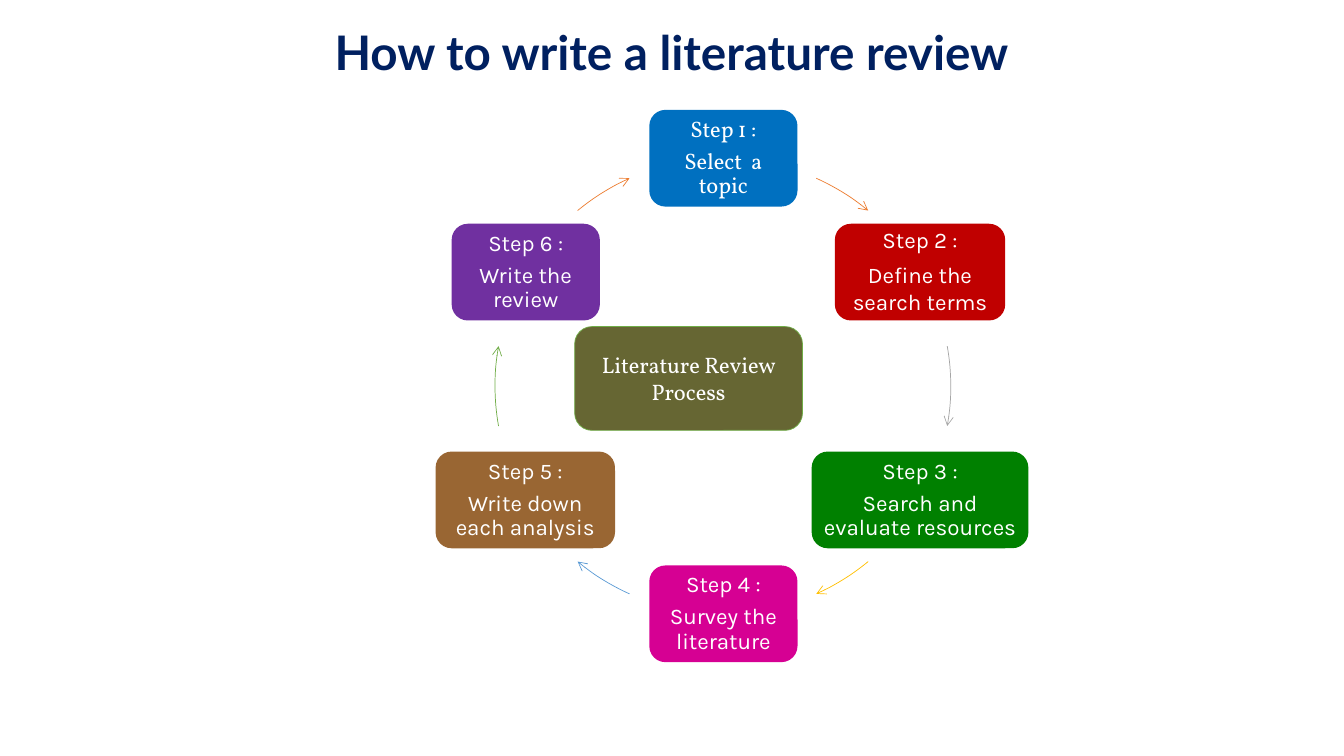
from dataclasses import dataclass
from math import cos, radians, sin

from lxml import etree
from pptx import Presentation
from pptx.dml.color import RGBColor
from pptx.enum.shapes import MSO_SHAPE
from pptx.enum.text import MSO_ANCHOR, MSO_AUTO_SIZE, PP_ALIGN
from pptx.oxml.ns import qn
from pptx.util import Emu, Pt

ROUNDED, ARC = MSO_SHAPE.ROUNDED_RECTANGLE, MSO_SHAPE.ARC
TOP, MIDDLE = MSO_ANCHOR.TOP, MSO_ANCHOR.MIDDLE
CENTER = PP_ALIGN.CENTER
NO_AUTOFIT = MSO_AUTO_SIZE.NONE

EMU_PER_PX = 9144  # 100 px to the inch
SLIDE_W, SLIDE_H = 1333, 750
RING_X, RING_Y, RING_R = 717, 383, 226
STEP_H = 96
STEP_INSET = 7

WHITE = RGBColor(0xFF, 0xFF, 0xFF)
NAVY = RGBColor(0x00, 0x20, 0x60)
BLUE = RGBColor(0x00, 0x70, 0xC0)
RED = RGBColor(0xC0, 0x00, 0x00)
GREEN = RGBColor(0x00, 0x80, 0x00)
PINK = RGBColor(0xD6, 0x00, 0x93)
BROWN = RGBColor(0x99, 0x66, 0x33)
PURPLE = RGBColor(0x70, 0x30, 0xA0)
OLIVE = RGBColor(0x66, 0x66, 0x33)
ORANGE = RGBColor(0xED, 0x7D, 0x31)
GREY = RGBColor(0xA5, 0xA5, 0xA5)
GOLD = RGBColor(0xFF, 0xC0, 0x00)
SKY = RGBColor(0x5B, 0x9B, 0xD5)
LEAF = RGBColor(0x70, 0xAD, 0x47)

SERIF, SANS, TITLE_FONT = "Vollkorn", "Karla", "Lato"


@dataclass(frozen=True)
class Step:
    lines: tuple[str, ...]
    width: int
    fill: RGBColor
    arrow: RGBColor
    arc: tuple[float, float]  # clockwise degrees from three o'clock
    font: str = SANS
    body_spacing: float = 0.9


STEPS = (
    Step(("Step 1 :", "Select  a topic"), 147, BLUE, ORANGE, (294.2, 309.6), SERIF),
    Step(("Step 2 :", "Define the", "search terms"), 169, RED, GREY, (349.9, 10.1),
         body_spacing=1.0),
    Step(("Step 3 :", "Search and evaluate resources"), 215, GREEN, GOLD, (50.4, 65.8)),
    Step(("Step 4 :", "Survey the literature"), 147, PINK, SKY, (114.2, 129.6)),
    Step(("Step 5 :", "Write down each analysis"), 178, BROWN, LEAF, (169.9, 190.1)),
    Step(("Step 6 :", "Write the review"), 147, PURPLE, ORANGE, (230.4, 245.8)),
)


def px(n: int) -> Emu:
    return Emu(n * EMU_PER_PX)


def set_all(target, **values) -> None:
    for name, value in values.items():
        setattr(target, name, value)


def add_text(p, text: str, size: int, font: str, colour: RGBColor, bold: bool = False):
    p.alignment = CENTER
    r = p.add_run()
    r.text = text
    set_all(r.font, size=Pt(size), name=font, bold=bold)
    r.font.color.rgb = colour
    return r


def add_plain_shape(s, kind, left: int, top: int, width: int, height: int):
    sp = s.shapes.add_shape(kind, px(left), px(top), px(width), px(height))
    sp.shadow.inherit = False
    return sp


def set_fill(sp, colour: RGBColor) -> None:
    sp.fill.solid()
    sp.fill.fore_color.rgb = colour


def set_line(sp, colour: RGBColor) -> None:
    sp.line.color.rgb = colour
    sp.line.width = Pt(0.5)


def add_step(s, step: Step, angle: float) -> None:
    """Draw a step box centred on the ring at the given angle."""
    x = RING_X + RING_R * cos(radians(angle))
    y = RING_Y + RING_R * sin(radians(angle))
    sp = add_plain_shape(s, ROUNDED, round(x - step.width / 2),
                         round(y - STEP_H / 2), step.width, STEP_H)
    set_fill(sp, step.fill)
    sp.line.fill.background()
    tf = sp.text_frame
    inset = px(STEP_INSET)
    set_all(tf, word_wrap=True, vertical_anchor=MIDDLE, margin_left=inset,
            margin_right=inset, margin_top=inset, margin_bottom=inset)
    for i, line in enumerate(step.lines):
        p = tf.add_paragraph() if i else tf.paragraphs[0]
        p.line_spacing = step.body_spacing if i else 0.9
        p.space_after = Pt(0 if i else 5.6)
        add_text(p, line, 16, step.font, WHITE)


def add_ring_arrow(s, step: Step) -> None:
    sp = add_plain_shape(s, ARC, RING_X - RING_R, RING_Y - RING_R,
                         2 * RING_R, 2 * RING_R)
    for i, degrees in enumerate(step.arc):
        sp.adjustments[i] = degrees * 0.6  # 60000 units a degree, scaled by 100000
    sp.fill.background()
    set_line(sp, step.arrow)
    etree.SubElement(sp.line._get_or_add_ln(), qn("a:tailEnd"), type="arrow")


def add_centre_box(s) -> None:
    sp = add_plain_shape(s, ROUNDED, 570, 324, 226, 103)
    set_fill(sp, OLIVE)
    set_line(sp, LEAF)
    tf = sp.text_frame
    set_all(tf, word_wrap=True, vertical_anchor=MIDDLE)
    add_text(tf.paragraphs[0], "Literature Review Process", 16, SERIF, WHITE)


def add_title(s) -> None:
    sp = s.shapes.title
    set_all(sp, left=px(141), top=px(24), width=px(1050), height=px(115))
    tf = sp.text_frame
    set_all(tf, word_wrap=True, vertical_anchor=TOP, auto_size=NO_AUTOFIT)
    p = tf.paragraphs[0]
    p.line_spacing = 0.9
    r = add_text(p, "How to write a literature review", 34, TITLE_FONT, NAVY, bold=True)
    ln = etree.Element(qn("a:ln"), w=str(Pt(0.75)))
    fill = etree.SubElement(ln, qn("a:solidFill"))
    etree.SubElement(fill, qn("a:srgbClr"), val=str(BLUE))
    r.font._element.insert(0, ln)


def main() -> None:
    prs = Presentation()
    set_all(prs, slide_width=px(SLIDE_W), slide_height=px(SLIDE_H))
    s = prs.slides.add_slide(prs.slide_layouts[5])
    for i, step in enumerate(STEPS):
        add_step(s, step, i * 360 / len(STEPS) - 90)
        add_ring_arrow(s, step)
    add_centre_box(s)
    add_title(s)
    prs.save("out.pptx")


if __name__ == "__main__":
    main()
